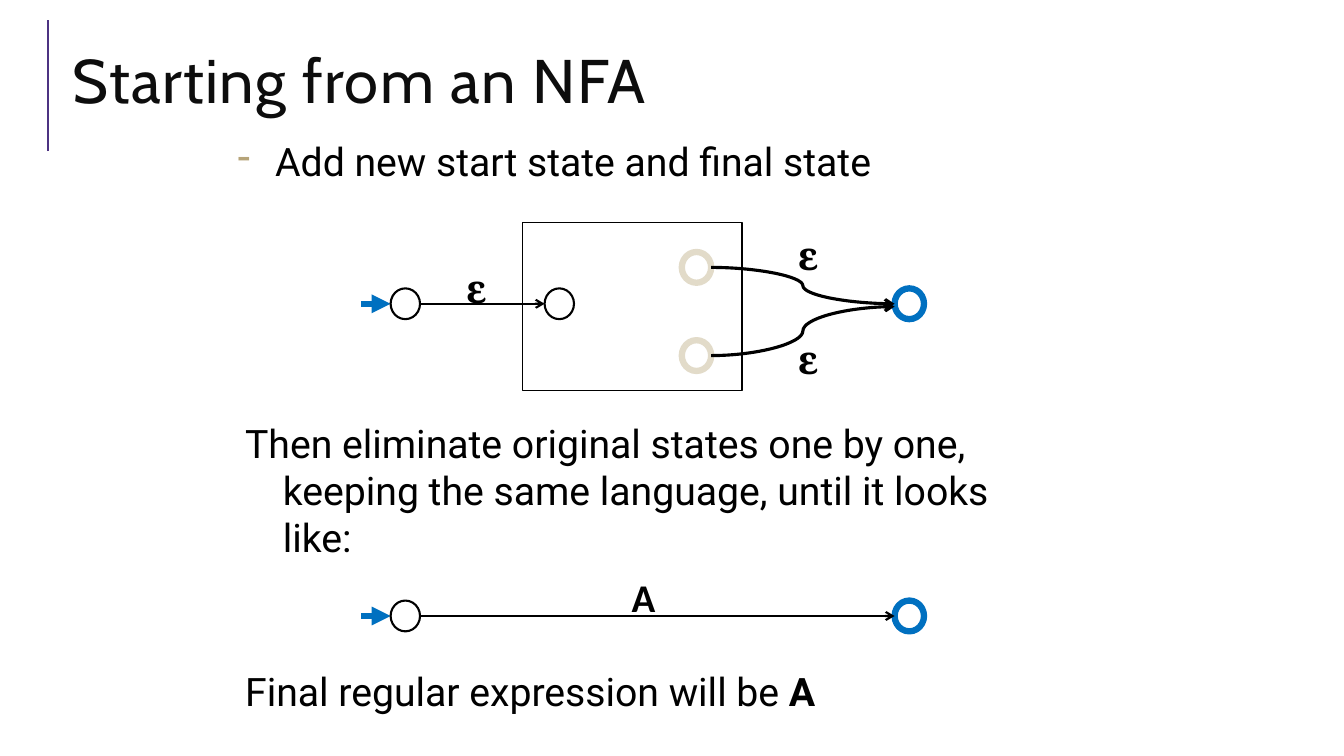
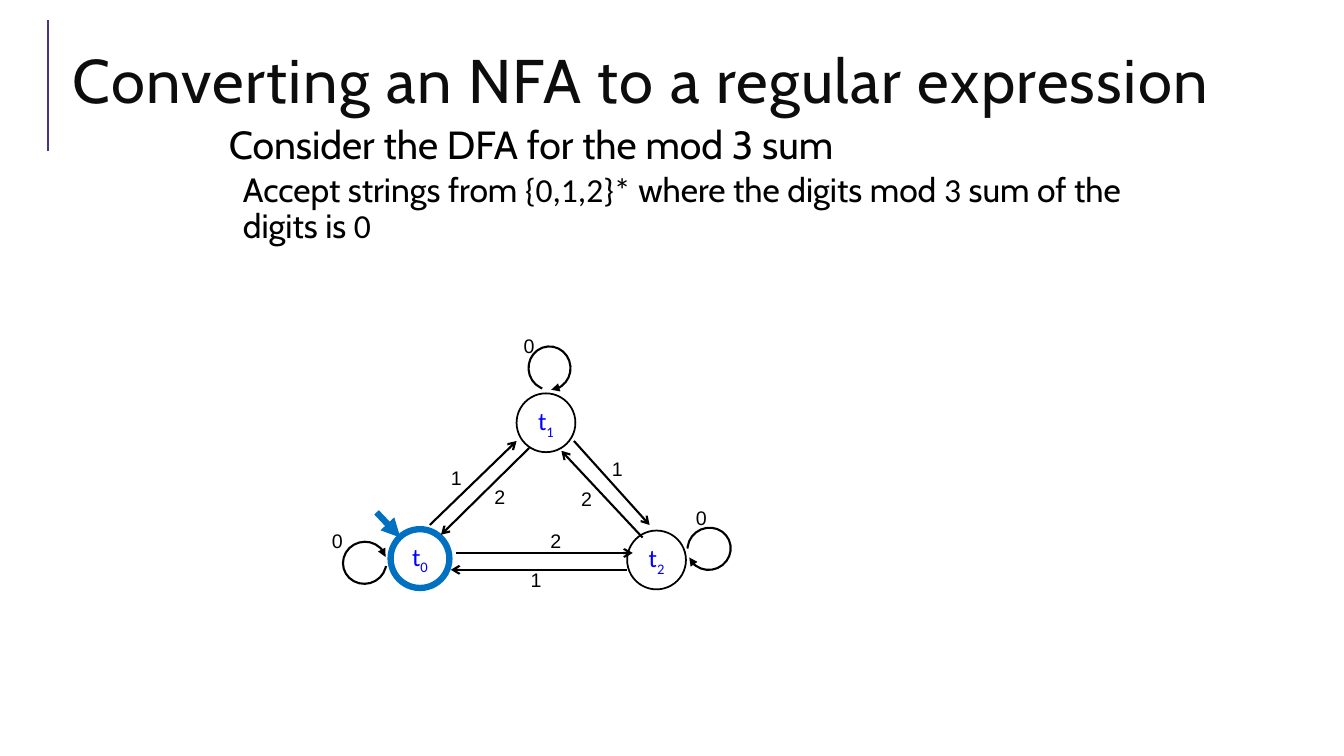
from lxml import etree
from pptx import Presentation
from pptx.dml.color import RGBColor
from pptx.enum import shapes, text
from pptx.oxml import ns
from pptx.util import Pt

BLACK, BLUE, INK = "000000", "0070C0", "0000FF"
PURPLE, TITLE, TAN, SAND = "4C3282", "0D0D0D", "B6A479", "E2DBC9"
STRAIGHT, CURVE = shapes.MSO_CONNECTOR.STRAIGHT, shapes.MSO_CONNECTOR.CURVE
OVAL, RECT, ARC = (shapes.MSO_SHAPE.OVAL, shapes.MSO_SHAPE.RECTANGLE,
                   shapes.MSO_SHAPE.ARC)
STATE_W, STATE_H = 21, 22
FINAL = dict(color=BLUE, width=4.5)


def rgb(value):
    return RGBColor.from_string(value)


def assign(obj, values):
    for name, value in values.items():
        setattr(obj, name, value)


def sub(parent, tag, **attrs):
    return etree.SubElement(parent, ns.qn(tag), attrs)


def style_line(sp, color, width, tail=None):
    sp.line.color.rgb = rgb(color)
    sp.line.width = Pt(width)
    if tail:
        sub(sp.element.spPr.find(ns.qn("a:ln")), "a:tailEnd", type=tail)


def add_line(s, x1, y1, x2, y2, color=BLACK, width=1.5, tail=None, kind=STRAIGHT):
    sp = s.shapes.add_connector(kind, Pt(x1), Pt(y1), Pt(x2), Pt(y2))
    style_line(sp, color, width, tail)
    sub(sp.element.spPr, "a:effectLst")
    return sp


def add_outline(s, kind, x, y, w, h, color=BLACK, width=1.5, tail=None):
    sp = s.shapes.add_shape(kind, Pt(x), Pt(y), Pt(w), Pt(h))
    sp.shadow.inherit = False
    sp.fill.background()
    style_line(sp, color, width, tail)
    return sp


def add_run(p, words, font, size, color=BLACK, **extra):
    r = p.add_run()
    r.text = words
    assign(r.font, dict(name=font, size=Pt(size), **extra))
    r.font.color.rgb = rgb(color)
    return r


def add_text(s, x, y, w, h, inset=None, **frame):
    tf = s.shapes.add_textbox(Pt(x), Pt(y), Pt(w), Pt(h)).text_frame
    assign(tf, dict(word_wrap=True) | frame)
    if inset is not None:
        sides = ("margin_left", "margin_top", "margin_right", "margin_bottom")
        assign(tf, dict.fromkeys(sides, Pt(inset)))
    return tf


def indent(p, left, first=0):
    pPr = p._p.get_or_add_pPr()
    pPr.set("marL", str(Pt(left)))
    pPr.set("indent", str(Pt(first)))
    return pPr


def add_label(s, x, y, w, h, words, font, size, **extra):
    tf = add_text(s, x, y, w, h, word_wrap=False,
                  auto_size=text.MSO_AUTO_SIZE.SHAPE_TO_FIT_TEXT)
    add_run(tf.paragraphs[0], words, font, size, **extra)


def add_symbol(s, x, y, words, font="Cambria", w=27):
    add_label(s, x, y, w, 41, words, font, 28, bold=True)


def new_slide(prs, title):
    s = prs.slides.add_slide(prs.slide_layouts[6])
    add_line(s, 34, 108, 34, 14, PURPLE)
    tf = add_text(s, 45, 21, 881, 80, vertical_anchor=text.MSO_ANCHOR.MIDDLE)
    p = tf.paragraphs[0]
    p.line_spacing = 0.8
    r = add_run(p, title, "Cabin", 44, TITLE)
    r._r.get_or_add_rPr().set("spc", "100")
    return s


def add_state(s, x, y, **line):
    add_outline(s, OVAL, x, y, STATE_W, STATE_H, **line)


def add_end_states(s, x, y):
    mid = y + STATE_H / 2
    add_line(s, x, mid, x + 21, mid, tail="triangle", **FINAL)
    add_state(s, x + 21, y)
    add_state(s, x + 381, y, **FINAL)


def add_wrapped_nfa(s, x, y):
    mid = y + STATE_H / 2
    add_outline(s, RECT, x + 115, y - 47, 157, 120, width=1)
    add_end_states(s, x, y)
    add_state(s, x + 131, y)
    add_line(s, x + 42, mid, x + 131, mid, tail="arrow")
    add_symbol(s, x + 68, y - 21, "ɛ")
    for state_y, end_y, label_y in ((-26, 0, -44), (37, 2, 30)):
        add_state(s, x + 229, y + state_y, color=SAND, width=4.5)
        add_line(s, x + 250, mid + state_y, x + 381, mid + end_y,
                 width=2.25, tail="arrow", kind=CURVE)
        add_symbol(s, x + 305, y + label_y, "ɛ")


def add_reduced_nfa(s, x, y):
    mid = y + STATE_H / 2
    add_end_states(s, x, y)
    add_line(s, x + 42, mid, x + 381, mid, tail="arrow")
    add_symbol(s, x + 186, y - 23, "A", "Calibri", 32)


def add_step(s, x, y, w, h):
    p = add_text(s, x, y, w, h, inset=3.6).paragraphs[0]
    assign(p, dict(line_spacing=0.9, space_before=Pt(2), space_after=Pt(4)))
    pPr = indent(p, 27, -27)
    sub(sub(pPr, "a:buClr"), "a:srgbClr", val=TAN)
    sub(pPr, "a:buChar", char="-")
    add_run(p, "Add new start state and final state", "Roboto", 28)


def add_conclusion(s, x, y, w, h):
    tf = add_text(s, x, y, w, h)
    p = tf.paragraphs[0]
    indent(p, 27, -27)
    add_run(p, "Then eliminate original states one by one, keeping the same "
            "language, until it looks like:", "Roboto", 28)
    p = tf.add_paragraph()
    indent(p, 27, -27)
    p.space_before = Pt(76)
    add_run(p, "Final regular expression will be ", "Roboto", 28)
    add_run(p, "A", "Roboto", 28, bold=True)


def add_problem(s, x, y, w, h):
    tf = add_text(s, x, y, w, h, inset=3.6)
    p = tf.paragraphs[0]
    assign(p, dict(line_spacing=0.9, space_before=Pt(12), space_after=Pt(2)))
    add_run(p, "Consider the DFA for the mod 3 sum", "Cabin", 28)
    p = tf.add_paragraph()
    assign(p, dict(line_spacing=0.9, space_before=Pt(2), space_after=Pt(4)))
    indent(p, 10)
    for words, font in (("Accept strings from ", "Cabin"), ("{0,1,2}*", "Calibri"),
                        (" where the digits mod ", "Cabin"), ("3", "Calibri"),
                        (" sum of the digits is ", "Cabin"), ("0", "Calibri")):
        add_run(p, words, font, 24)


def add_dfa_state(s, x, y, index, color=BLACK, width=1.25):
    tf = add_outline(s, OVAL, x, y, 42, 42, color, width).text_frame
    assign(tf, dict(vertical_anchor=text.MSO_ANCHOR.MIDDLE, word_wrap=False,
                    margin_left=0, margin_right=0))
    p = tf.paragraphs[0]
    p.alignment = text.PP_ALIGN.CENTER
    add_run(p, "t", "Calibri", 18, INK)
    r = add_run(p, index, "Calibri", 18, INK)
    r._r.get_or_add_rPr().set("baseline", "-25000")


def add_digit(s, x, y, digit):
    add_label(s, x, y, 22, 24, digit, "Arial", 14)


def add_loop(s, x, y, rotation):
    sp = add_outline(s, ARC, x, y, 31, 30, tail="triangle")
    sp.rotation = rotation
    sp.adjustments[0], sp.adjustments[1] = 14.54, 0


def add_dfa(s, x, y):
    add_dfa_state(s, x + 49, y + 144, "0", **FINAL)
    add_dfa_state(s, x + 218, y + 145, "2")
    add_dfa_state(s, x + 139, y + 47, "1")
    edges = (
        (77, 141, 139, 81, "1", 85, 95),
        (180, 81, 234, 141, "1", 200, 89),
        (218, 173, 92, 173, "1", 142, 168),
        (148, 86, 85, 148, "2", 116, 109),
        (229, 150, 171, 88, "2", 178, 110),
        (96, 161, 222, 161, "2", 156, 140),
    )
    for x1, y1, x2, y2, digit, dx, dy in edges:
        add_line(s, x + x1, y + y1, x + x2, y + y2, tail="arrow")
        add_digit(s, x + dx, y + dy, digit)
    loops = ((15, 153, 344.4, 0, 140), (147, 14, 85.5, 137, 1),
             (261, 143, 156.4, 260, 124))
    for lx, ly, rotation, dx, dy in loops:
        add_loop(s, x + lx, y + ly, rotation)
        add_digit(s, x + dx, y + dy, "0")
    add_line(s, x + 39, y + 132, x + 56, y + 150, tail="triangle", **FINAL)


def main():
    prs = Presentation()
    assign(prs, dict(slide_width=Pt(960), slide_height=Pt(540)))

    s = new_slide(prs, "Starting from an NFA")
    add_step(s, 166, 98, 648, 405)
    add_wrapped_nfa(s, 258, 206)
    add_reduced_nfa(s, 258, 429)
    add_conclusion(s, 168, 296, 552, 220)

    s = new_slide(prs, "Converting an NFA to a regular expression")
    add_problem(s, 160, 86, 648, 132)
    add_dfa(s, 230, 234)

    prs.save("out.pptx")


if __name__ == "__main__":
    main()
